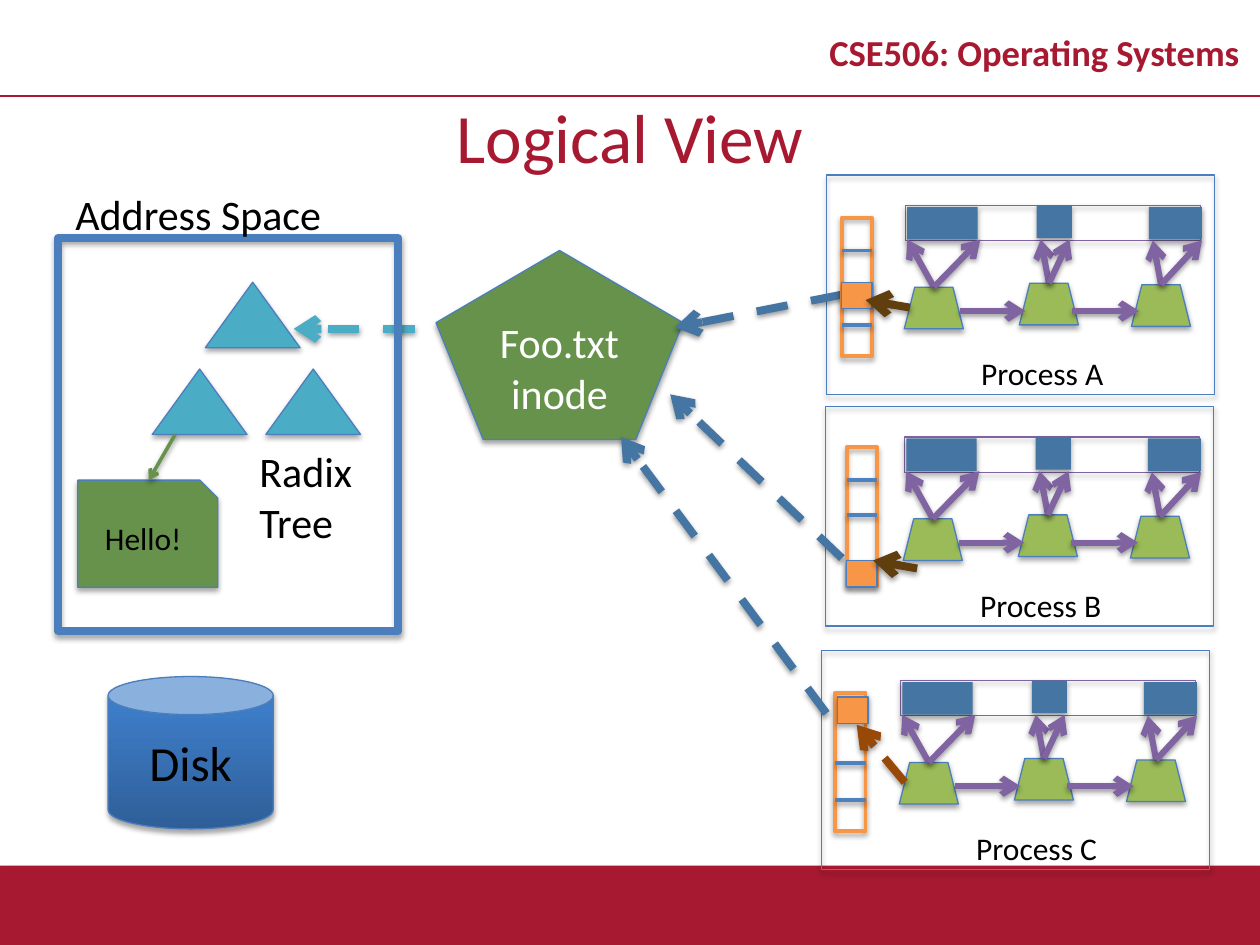
import copy

import lxml.etree
import pptx
import pptx.dml.color
import pptx.enum.dml
import pptx.enum.shapes
import pptx.enum.text
import pptx.oxml.ns
import pptx.util

Cm = pptx.util.Cm
Pt = pptx.util.Pt
RGBColor = pptx.dml.color.RGBColor
Shape = pptx.enum.shapes.MSO_SHAPE
Align = pptx.enum.text.PP_ALIGN
Anchor = pptx.enum.text.MSO_ANCHOR
qn = pptx.oxml.ns.qn

FONT = "Calibri"
CRIMSON = RGBColor(0xA7, 0x19, 0x30)
BLACK = RGBColor(0, 0, 0)
WHITE = RGBColor(0xFF, 0xFF, 0xFF)
OUTLINE = RGBColor(0x4B, 0x7E, 0xBC)
DIVIDER = RGBColor(0x4F, 0x81, 0xBD)
STEEL = RGBColor(0x45, 0x76, 0xA3)
GREEN = RGBColor(0x67, 0x92, 0x4B)
LIME = RGBColor(0x9B, 0xBB, 0x59)
PURPLE = RGBColor(0x80, 0x64, 0xA2)
AQUA = RGBColor(0x4B, 0xAC, 0xC6)
ORANGE = RGBColor(0xF7, 0x96, 0x46)
BROWN = RGBColor(0x60, 0x3E, 0x0E)
RUST = RGBColor(0x98, 0x48, 0x07)
DISK_STOPS = [
    (0, RGBColor(0x2F, 0x5F, 0x99)),
    (0.8, RGBColor(0x3D, 0x7C, 0xC7)),
    (1, RGBColor(0x3A, 0x7C, 0xCB)),
]

PROCESSES = [
    dict(name="Process A", origin=(16.66, 3.53), table=(16.97, 4.39),
         dividers=(5.05, 6.55), slot=(16.97, 5.69),
         inode_arrow=((16.97, 5.94), (13.61, 6.6)),
         slot_arrow=((18.34, 6.2), (17.45, 6.05)), slot_arrow_color=BROWN),
    dict(name="Process B", origin=(16.64, 8.2), table=(17.07, 9.02),
         dividers=(9.68, 10.39), slot=(17.07, 11.3),
         inode_arrow=((16.97, 11.25), (13.51, 7.95)),
         slot_arrow=((18.49, 11.46), (17.6, 11.3)), slot_arrow_color=BROWN),
    dict(name="Process C", origin=(16.56, 13.11), table=(16.84, 13.97),
         dividers=(15.39, 16.13), slot=(16.89, 14.05),
         inode_arrow=((16.66, 14.38), (12.52, 8.81)),
         slot_arrow=((18.24, 15.77), (17.27, 14.61)), slot_arrow_color=RUST),
]
REGIONS = [(6.5, 0.64, 1.07), (4.24, 0.61, 0.71), (1.63, 0.64, 1.42)]
NODES = [
    ((1.57, 2.26), (1.63, 3.1), 1.3),
    ((3.89, 2.18), (4.32, 4.9), 1.3),
    ((6.15, 2.21), (6.58, 7.57), 1.32),
]
NODE_LINKS = [(2.69, 4.01), (4.95, 6.3)]
NODE_LINK_Y = 2.74
NODE_SIZE = (1.19, 0.84)
TABLE_SIZE = (0.61, 2.79)
SLOT_SIZE = (0.61, 0.53)
TREE_NODES = [(4.14, 5.69), (3.07, 7.44), (5.36, 7.44)]
LABELS = [
    ("Address Space", (1.27, 3.68, 5.79, 1.27)),
    ("Radix\nTree", (4.98, 8.86, 2.69, 2.31)),
]


def add_shadow(effects, alpha, distance):
    shadow = lxml.etree.SubElement(
        effects, qn("a:outerShdw"), blurRad=str(Pt(3.1)), dist=str(Pt(distance)),
        dir="5400000", rotWithShape="0")
    color = lxml.etree.SubElement(shadow, qn("a:srgbClr"), val="000000")
    lxml.etree.SubElement(color, qn("a:alpha"), val=str(alpha * 1000))


def write_text(shape, text, size, color=BLACK, align=Align.CENTER, bold=False):
    paragraph = shape.text_frame.paragraphs[0]
    paragraph.alignment = align
    for index, line in enumerate(text.split("\n")):
        if index:
            paragraph.add_line_break()
        run = paragraph.add_run()
        run.text = line
        run.font.name = FONT
        run.font.size = Pt(size)
        run.font.bold = bold
        run.font.color.rgb = color
    return paragraph


def add_box(container, kind, box, fill=None, line=OUTLINE, width=0.75):
    shape = container.shapes.add_shape(kind, *map(Cm, box))
    if fill is None:
        shape.fill.background()
    else:
        shape.fill.solid()
        shape.fill.fore_color.rgb = fill
    if line is None:
        shape.line.fill.background()
    else:
        shape.line.color.rgb = line
        shape.line.width = Pt(width)
    shape.shadow.inherit = False
    add_shadow(shape.element.spPr.find(qn("a:effectLst")), 35, 1.8)
    shape.text_frame.vertical_anchor = Anchor.MIDDLE
    return shape


def add_line(container, start, end, color, width, arrow=True, dash=False, shadow=True):
    connector = container.shapes.add_connector(
        pptx.enum.shapes.MSO_CONNECTOR.STRAIGHT, *map(Cm, (*start, *end)))
    connector.line.color.rgb = color
    connector.line.width = Pt(width)
    if dash:
        connector.line.dash_style = pptx.enum.dml.MSO_LINE.DASH
    properties = connector.element.spPr
    if arrow:
        lxml.etree.SubElement(properties.find(qn("a:ln")), qn("a:tailEnd"), type="arrow")
    effects = lxml.etree.SubElement(properties, qn("a:effectLst"))
    if shadow:
        add_shadow(effects, 38, 1.6)


def add_label(slide, text, box, size):
    label = slide.shapes.add_textbox(*map(Cm, box))
    label.text_frame.word_wrap = False
    label.text_frame.auto_size = pptx.enum.text.MSO_AUTO_SIZE.SHAPE_TO_FIT_TEXT
    write_text(label, text, size, align=Align.LEFT)


def add_heading(slide, text, box, size, bold=False):
    heading = slide.shapes.add_textbox(*map(Cm, box))
    heading.text_frame.word_wrap = True
    heading.text_frame.vertical_anchor = Anchor.MIDDLE
    return write_text(heading, text, size, CRIMSON, bold=bold)


def add_disk(slide):
    disk = add_box(slide, Shape.CAN, (2.18, 13.64, 3.33, 3.07), STEEL)
    disk.fill.gradient()
    disk.fill.gradient_angle = 90
    stop_list = disk.element.spPr.find(qn("a:gradFill")).find(qn("a:gsLst"))
    stop_list.append(copy.deepcopy(stop_list[0]))
    for stop, (position, color) in zip(disk.fill.gradient_stops, DISK_STOPS):
        stop.position = position
        stop.color.rgb = color
    write_text(disk, "Disk", 28)


def add_process(slide, process):
    left, top = process["origin"]
    add_box(slide, Shape.RECTANGLE, (left, top, 7.82, 4.42))
    add_box(slide, Shape.RECTANGLE, (left + 1.6, top + 0.61, 5.94, 0.71), line=PURPLE)
    add_label(slide, process["name"], (left + 2.87, top + 3.48, 3.2, 1.02), 18)

    group = slide.shapes.add_group_shape()
    for x, y, width in REGIONS:
        add_box(group, Shape.RECTANGLE, (left + x, top + y, width, 0.66), STEEL, None)
    for (x, y), targets, target_y in NODES:
        add_box(group, Shape.TRAPEZOID, (left + x, top + y, *NODE_SIZE), LIME)
        apex = (left + x + NODE_SIZE[0] / 2, top + y)
        for target_x in targets:
            add_line(group, apex, (left + target_x, top + target_y), PURPLE, 3.5)
    for start_x, end_x in NODE_LINKS:
        add_line(group, (left + start_x, top + NODE_LINK_Y),
                 (left + end_x, top + NODE_LINK_Y), PURPLE, 3.5)

    add_line(slide, *process["inode_arrow"], STEEL, 4.5, dash=True)
    table_left = process["table"][0]
    add_box(slide, Shape.RECTANGLE, (*process["table"], *TABLE_SIZE), line=ORANGE, width=2.25)
    for y in process["dividers"]:
        add_line(slide, (table_left, y), (table_left + TABLE_SIZE[0], y), DIVIDER, 2.25,
                 arrow=False)
    add_box(slide, Shape.RECTANGLE, (*process["slot"], *SLOT_SIZE), ORANGE)
    add_line(slide, *process["slot_arrow"], process["slot_arrow_color"], 4.5, dash=True)


def main():
    presentation = pptx.Presentation()
    presentation.slide_width = Cm(25.4)
    presentation.slide_height = Cm(19.05)
    slide = presentation.slides.add_slide(presentation.slide_layouts[6])

    add_box(slide, Shape.RECTANGLE, (0, 17.45, 25.4, 1.6), CRIMSON, None)
    add_line(slide, (0, 1.93), (25.4, 1.93), CRIMSON, 1, arrow=False, shadow=False)
    course = add_heading(slide, "CSE506: Operating Systems", (16.31, 0.33, 9.09, 1.6), 20.9, True)
    course.line_spacing = 0.8
    add_heading(slide, "Logical View", (0, 1.93, 25.4, 1.6), 39.6)

    add_disk(slide)
    page = add_box(slide, Shape.SNIP_1_RECTANGLE, (1.57, 9.68, 2.82, 2.16), GREEN)
    write_text(page, "Hello!", 18)
    inode = add_box(slide, Shape.REGULAR_PENTAGON, (8.79, 5.05, 4.98, 3.81), GREEN)
    write_text(inode, "Foo.txt\ninode", 24, WHITE)
    add_line(slide, (8.36, 6.63), (5.92, 6.63), AQUA, 4.5, dash=True)

    for process in PROCESSES:
        add_process(slide, process)

    for x, y in TREE_NODES:
        add_box(slide, Shape.ISOSCELES_TRIANGLE, (x, y, 1.91, 1.32), AQUA)
    add_line(slide, (3.53, 8.76), (3, 9.68), GREEN, 2)
    add_box(slide, Shape.RECTANGLE, (1.17, 4.8, 6.86, 7.92), width=4.5)
    for text, box in LABELS:
        add_label(slide, text, box, 24)

    presentation.save("out.pptx")


if __name__ == "__main__":
    main()
